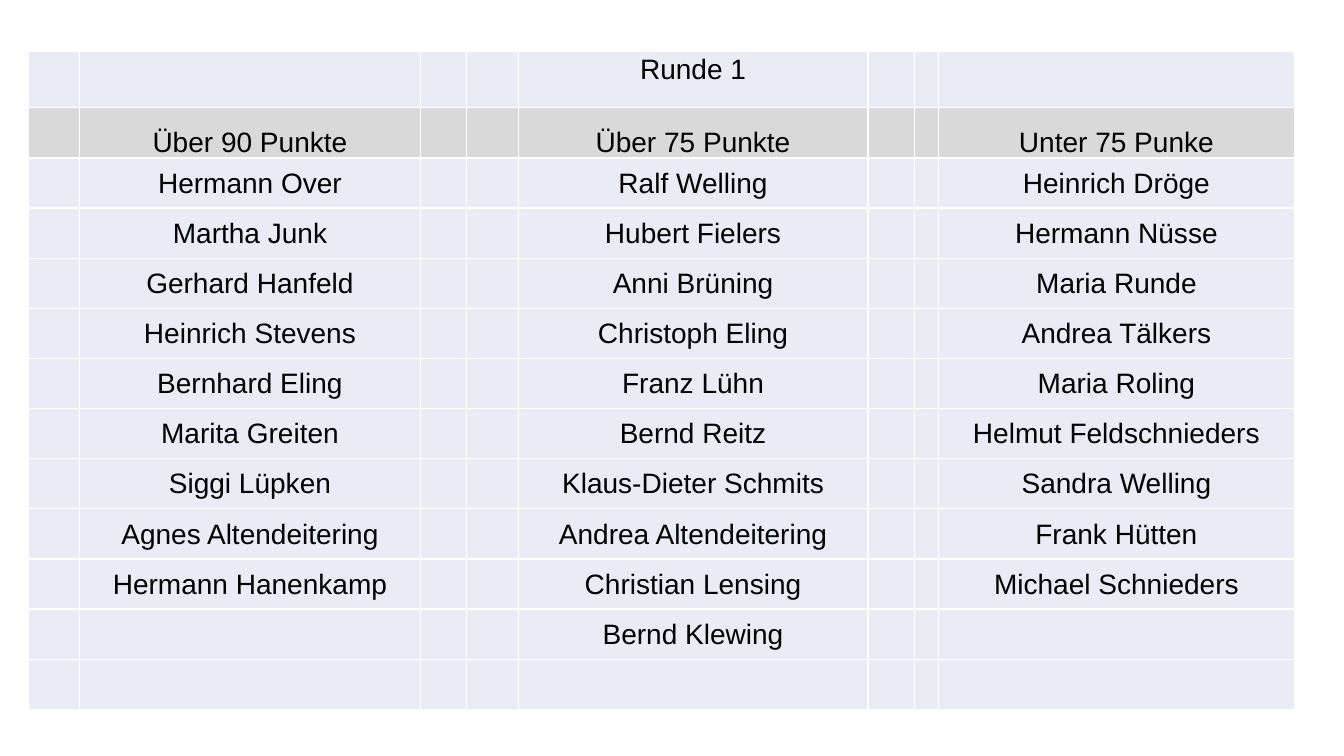
import itertools

import lxml.etree
import pptx
import pptx.dml.color
import pptx.enum.text
import pptx.oxml.ns
import pptx.util

Inches = pptx.util.Inches
Anchor = pptx.enum.text.MSO_ANCHOR

ROUND_TITLE = "Runde 1"
GROUPS = {
    "Über 90 Punkte": [
        "Hermann Over", "Martha Junk", "Gerhard Hanfeld", "Heinrich Stevens",
        "Bernhard Eling", "Marita Greiten", "Siggi Lüpken",
        "Agnes Altendeitering", "Hermann Hanenkamp",
    ],
    "Über 75 Punkte": [
        "Ralf Welling", "Hubert Fielers", "Anni Brüning", "Christoph Eling",
        "Franz Lühn", "Bernd Reitz", "Klaus-Dieter Schmits",
        "Andrea Altendeitering", "Christian Lensing", "Bernd Klewing",
    ],
    "Unter 75 Punke": [
        "Heinrich Dröge", "Hermann Nüsse", "Maria Runde", "Andrea Tälkers",
        "Maria Roling", "Helmut Feldschnieders", "Sandra Welling",
        "Frank Hütten", "Michael Schnieders",
    ],
}
GROUP_COLUMNS = [1, 4, 7]
COLUMN_WIDTHS = [0.51, 3.38, 0.46, 0.51, 3.47, 0.46, 0.2, 3.53]
ROW_COUNT = 13
LEFT, TOP, HEIGHT = 0.28, 0.51, 6.53
TITLE_ROW_HEIGHT = 0.56
BODY_FILL, HEADER_FILL, BORDER = "E9EBF5", "D9D9D9", "FFFFFF"


def color(hex_string):
    return pptx.dml.color.RGBColor.from_string(hex_string)


def add_borders(cell, hex_string, width):
    properties = cell._tc.get_or_add_tcPr()
    for side in ("lnL", "lnR", "lnT", "lnB"):
        line = lxml.etree.SubElement(
            properties, pptx.oxml.ns.qn(f"a:{side}"), w=str(pptx.util.Pt(width)))
        fill = lxml.etree.SubElement(line, pptx.oxml.ns.qn("a:solidFill"))
        lxml.etree.SubElement(fill, pptx.oxml.ns.qn("a:srgbClr"), val=hex_string)


def write(cell, text, anchor=Anchor.MIDDLE, bottom=0, size=20, font="Arial",
          hex_string="000000"):
    cell.vertical_anchor = anchor
    cell.margin_left = cell.margin_right = cell.margin_top = Inches(0.01)
    cell.margin_bottom = Inches(bottom)
    paragraph = cell.text_frame.paragraphs[0]
    paragraph.alignment = pptx.enum.text.PP_ALIGN.CENTER
    run = paragraph.add_run()
    run.text = text
    run.font.size = pptx.util.Pt(size)
    run.font.name = font
    run.font.color.rgb = color(hex_string)


def add_score_table(slide):
    table = slide.shapes.add_table(
        ROW_COUNT, len(COLUMN_WIDTHS), Inches(LEFT), Inches(TOP),
        Inches(sum(COLUMN_WIDTHS)), Inches(HEIGHT)).table
    table.first_row = table.horz_banding = False
    for column, width in zip(table.columns, COLUMN_WIDTHS):
        column.width = Inches(width)
    for row in table.rows:
        row.height = Inches((HEIGHT - TITLE_ROW_HEIGHT) / (ROW_COUNT - 1))
    table.rows[0].height = Inches(TITLE_ROW_HEIGHT)

    for row, column in itertools.product(range(ROW_COUNT), range(len(COLUMN_WIDTHS))):
        cell = table.cell(row, column)
        add_borders(cell, BORDER, 1)
        cell.fill.solid()
        cell.fill.fore_color.rgb = color(HEADER_FILL if row == 1 else BODY_FILL)

    write(table.cell(0, GROUP_COLUMNS[1]), ROUND_TITLE, anchor=Anchor.BOTTOM, bottom=0.22)
    for column, (heading, names) in zip(GROUP_COLUMNS, GROUPS.items()):
        write(table.cell(1, column), heading, anchor=Anchor.BOTTOM)
        for row, name in enumerate(names, start=2):
            write(table.cell(row, column), name)


def main():
    presentation = pptx.Presentation()
    presentation.slide_width = Inches(13.33)
    presentation.slide_height = Inches(7.5)
    add_score_table(presentation.slides.add_slide(presentation.slide_layouts[6]))
    presentation.save("out.pptx")


if __name__ == "__main__":
    main()
